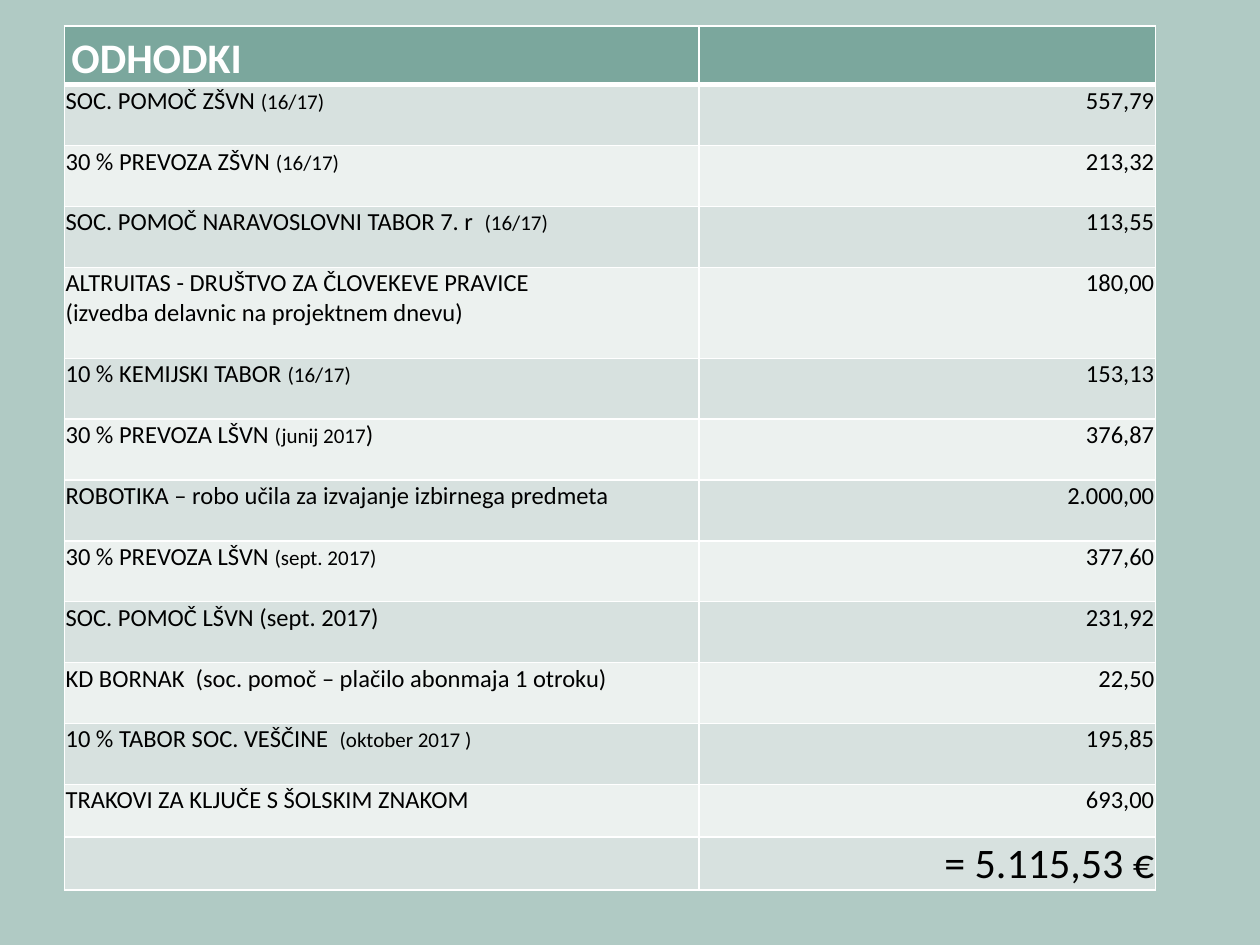
from lxml import etree
from pptx import Presentation
from pptx.dml.color import RGBColor
from pptx.enum.text import MSO_ANCHOR, PP_ALIGN
from pptx.oxml.ns import qn
from pptx.util import Pt

LEFT, RIGHT = PP_ALIGN.LEFT, PP_ALIGN.RIGHT
TOP, BOTTOM = MSO_ANCHOR.TOP, MSO_ANCHOR.BOTTOM

COLORS = {
    "background": "B0CAC4",
    "header": "7BA79D",
    "odd": "D7E1DF",
    "even": "ECF1EF",
    "border": "FFFFFF",
    "title": "FFFFFF",
    "text": "000000",
}
FONT = "Calibri"
LARGE, NORMAL, SMALL = 24, 14, 12

TITLE = "ODHODKI"
EXPENSES = [
    ([[("SOC. POMOČ ZŠVN ", NORMAL), ("(16/17)", SMALL)]], "557,79"),
    ([[("30 % PREVOZA ZŠVN ", NORMAL), ("(16/17)", SMALL)]], "213,32"),
    ([[("SOC. POMOČ NARAVOSLOVNI TABOR 7. r  ", NORMAL), ("(16/17)", SMALL)]], "113,55"),
    ([[("ALTRUITAS - DRUŠTVO ZA ČLOVEKEVE PRAVICE", NORMAL)],
      [("(izvedba delavnic na projektnem dnevu)", NORMAL)]], "180,00"),
    ([[("10 % KEMIJSKI TABOR ", NORMAL), ("(16/17)", SMALL)]], "153,13"),
    ([[("30 % PREVOZA LŠVN ", NORMAL), ("(junij 2017", SMALL), (")", NORMAL)]], "376,87"),
    ([[("ROBOTIKA – robo učila za izvajanje izbirnega predmeta", NORMAL)]], "2.000,00"),
    ([[("30 % PREVOZA LŠVN ", NORMAL), ("(sept. 2017)", SMALL)]], "377,60"),
    ([[("SOC. POMOČ LŠVN (sept. 2017)", NORMAL)]], "231,92"),
    ([[("KD BORNAK  (soc. pomoč – plačilo abonmaja 1 otroku)", NORMAL)]], "22,50"),
    ([[("10 % TABOR SOC. VEŠČINE  ", NORMAL), ("(oktober 2017 )", SMALL)]], "195,85"),
    ([[("TRAKOVI ZA KLJUČE S ŠOLSKIM ZNAKOM", NORMAL)]], "693,00"),
]
TOTAL = "= 5.115,53 €"

TABLE_LEFT, TABLE_TOP = 36.8, 15
COLUMN_WIDTHS = [362.7, 260.8]
HEADER_HEIGHT, ROW_HEIGHT, LINE_HEIGHT, CLOSING_HEIGHT = 33.4, 34.8, 17.2, 30.2
INSET = 0.7
TITLE_INSET = 4


def color(name):
    return RGBColor.from_string(COLORS[name])


def set_borders(cell, widths):
    properties = cell._tc.get_or_add_tcPr()
    for side in ("lnL", "lnR", "lnT", "lnB"):
        line = etree.SubElement(properties, qn(f"a:{side}"), w=str(Pt(widths.get(side, 1))))
        fill = etree.SubElement(line, qn("a:solidFill"))
        etree.SubElement(fill, qn("a:srgbClr"), val=COLORS["border"])


def fill_cell(cell, paragraphs, align, text_color, bold):
    for index, spans in enumerate(paragraphs):
        frame = cell.text_frame
        para = frame.paragraphs[0] if index == 0 else frame.add_paragraph()
        para.alignment = align
        for text, size in spans:
            span = para.add_run()
            span.text = text
            span.font.name = FONT
            span.font.size = Pt(size)
            span.font.bold = bold
            span.font.color.rgb = color(text_color)


def row_height(label):
    return ROW_HEIGHT + LINE_HEIGHT * (len(label) - 1)


def main():
    deck = Presentation()
    deck.slide_width, deck.slide_height = Pt(720), Pt(540)
    page = deck.slides.add_slide(deck.slide_layouts[6])
    page.background.fill.solid()
    page.background.fill.fore_color.rgb = color("background")

    rows = [([[(TITLE, LARGE)]], [])]
    rows += [(label, [[(amount, NORMAL)]]) for label, amount in EXPENSES]
    rows.append(([], [[(TOTAL, LARGE)]]))
    heights = [HEADER_HEIGHT] + [row_height(label) for label, _ in EXPENSES[:-1]]
    heights += [CLOSING_HEIGHT] * 2

    table = page.shapes.add_table(
        len(rows), len(COLUMN_WIDTHS), Pt(TABLE_LEFT), Pt(TABLE_TOP),
        Pt(sum(COLUMN_WIDTHS)), Pt(sum(heights))).table
    table.horz_banding = False
    for column, width in zip(table.columns, COLUMN_WIDTHS):
        column.width = Pt(width)

    for number, (contents, height) in enumerate(zip(rows, heights)):
        table.rows[number].height = Pt(height)
        is_header = number == 0
        fill = "header" if is_header else ("even", "odd")[number % 2]
        widths = {0: {"lnB": 3}, 1: {"lnT": 3}}.get(number, {})
        for cell, paragraphs, align in zip(table.rows[number].cells, contents, (LEFT, RIGHT)):
            set_borders(cell, widths)
            cell.fill.solid()
            cell.fill.fore_color.rgb = color(fill)
            cell.margin_left = Pt(TITLE_INSET if is_header else INSET)
            cell.margin_right = cell.margin_top = Pt(INSET)
            cell.margin_bottom = 0
            cell.vertical_anchor = BOTTOM if is_header else TOP
            fill_cell(cell, paragraphs, align, "title" if is_header else "text", is_header)

    deck.save("out.pptx")


if __name__ == "__main__":
    main()
